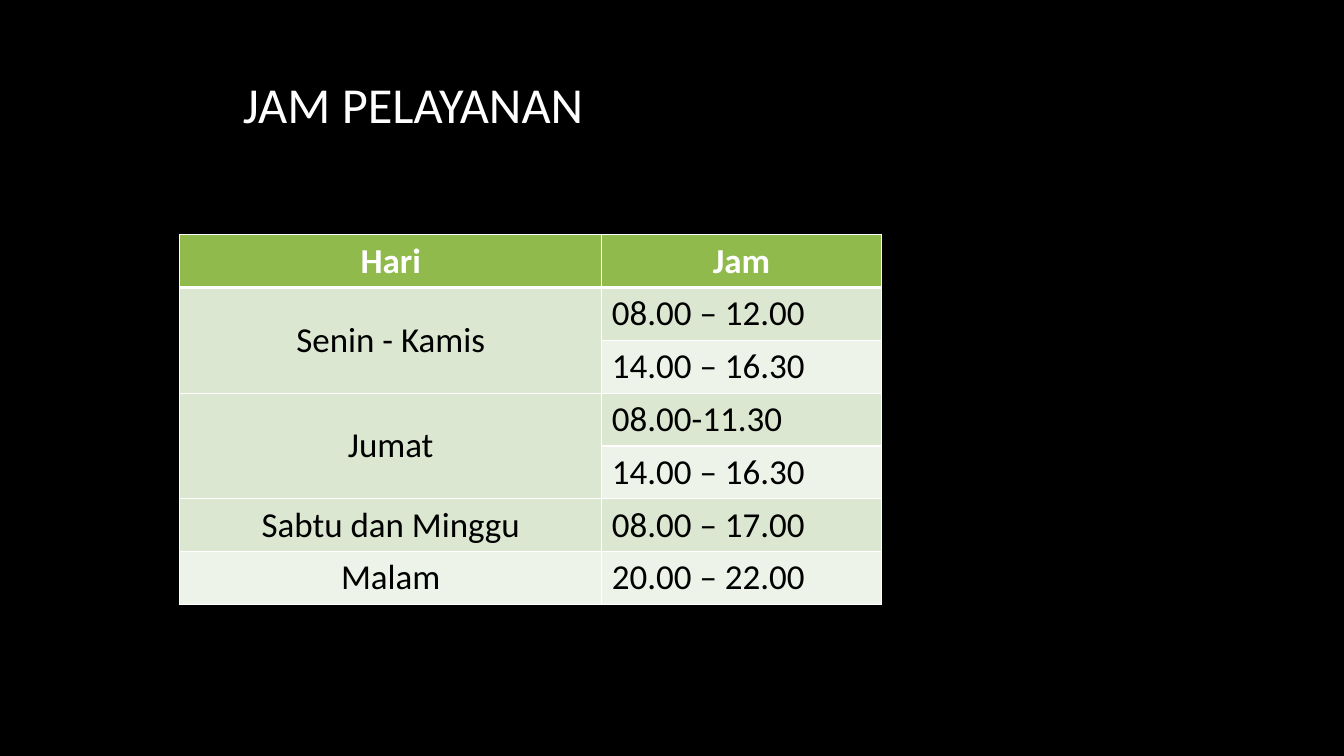
from lxml import etree
from pptx import Presentation
from pptx.dml.color import RGBColor
from pptx.enum.text import MSO_ANCHOR, PP_ALIGN
from pptx.oxml.ns import qn
from pptx.util import Inches, Pt

LEFT, CENTER = PP_ALIGN.LEFT, PP_ALIGN.CENTER
TOP, MIDDLE = MSO_ANCHOR.TOP, MSO_ANCHOR.MIDDLE
TITLE_ONLY = 5

WHITE, BLACK = "FFFFFF", "000000"
GREEN, BAND_DARK, BAND_LIGHT = "90BA4C", "DBE7D0", "EEF3E9"

HOURS = [
    ("Hari", ["Jam"]),
    ("Senin - Kamis", ["08.00 – 12.00", "14.00 – 16.30"]),
    ("Jumat", ["08.00-11.30", "14.00 – 16.30"]),
    ("Sabtu dan Minggu", ["08.00 – 17.00"]),
    ("Malam", ["20.00 – 22.00"]),
]


def rgb(value):
    return RGBColor.from_string(value)


class SlideBuilder:
    font = "Calibri"

    def __init__(self, prs):
        self.s = prs.slides.add_slide(prs.slide_layouts[TITLE_ONLY])

    def background(self, color):
        fill = self.s.background.fill
        fill.solid()
        fill.fore_color.rgb = rgb(color)

    def text(self, tf, text, size, color, align=LEFT, bold=False):
        p = tf.paragraphs[0]
        p.alignment = align
        r = p.add_run()
        r.text = text
        for name, value in {"name": self.font, "size": Pt(size), "bold": bold}.items():
            setattr(r.font, name, value)
        r.font.color.rgb = rgb(color)

    def title(self, text, left, top, width, height):
        sp = self.s.shapes.title
        box = {"left": left, "top": top, "width": width, "height": height}
        for name, value in box.items():
            setattr(sp, name, Inches(value))
        sp.text_frame.vertical_anchor = MIDDLE
        self.text(sp.text_frame, text, 36, WHITE)

    def borders(self, cell, color, widths):
        tcPr = cell._tc.get_or_add_tcPr()
        for i, (side, width) in enumerate(widths.items()):
            ln = etree.Element(qn(f"a:ln{side}"), w=str(Pt(width)))
            fill = etree.SubElement(ln, qn("a:solidFill"))
            etree.SubElement(fill, qn("a:srgbClr"), val=color)
            tcPr.insert(i, ln)

    def cell(self, cell, row, text, align, anchor=TOP):
        header = row == 0
        color = GREEN if header else BAND_DARK if row % 2 else BAND_LIGHT
        cell.fill.solid()
        cell.fill.fore_color.rgb = rgb(color)
        cell.vertical_anchor = anchor
        self.borders(cell, WHITE, {"L": 1, "R": 1, "T": 3 if row == 1 else 1,
                                   "B": 3 if header else 1})
        if text:
            self.text(cell.text_frame, text, 25, WHITE if header else BLACK,
                      CENTER if header else align, header)

    def table(self, groups, left, top, col_widths, row_height):
        rows = sum(len(times) for _, times in groups)
        table = self.s.shapes.add_table(
            rows, len(col_widths), Inches(left), Inches(top),
            Inches(sum(col_widths)), Inches(row_height * rows)).table
        for column, width in zip(table.columns, col_widths):
            column.width = Inches(width)
        row = 0
        for day, times in groups:
            span = len(times)
            anchor = MIDDLE if span > 1 else TOP
            for i, time in enumerate(times):
                self.cell(table.cell(row + i, 0), row + i, "" if i else day, CENTER, anchor)
                self.cell(table.cell(row + i, 1), row + i, time, LEFT)
            if span > 1:
                table.cell(row, 0).merge(table.cell(row + span - 1, 0))
            row += span


def main():
    prs = Presentation()
    prs.slide_width, prs.slide_height = Inches(13.33), Inches(7.5)
    slide = SlideBuilder(prs)
    slide.background(BLACK)
    slide.title("JAM PELAYANAN", 2.31, 0.65, 4.87, 0.76)
    slide.table(HOURS, 1.78, 2.33, [4.19, 2.77], 0.41)
    prs.save("out.pptx")


if __name__ == "__main__":
    main()
